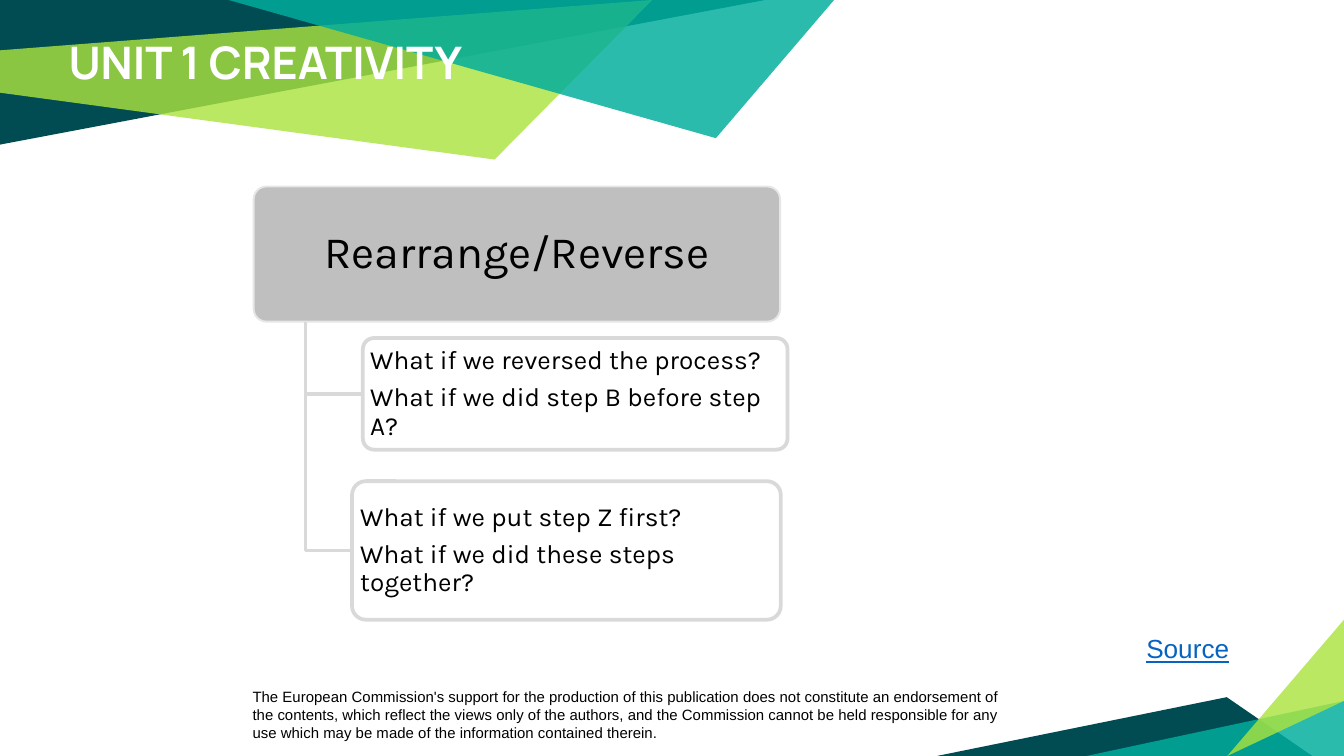
import pptx
import pptx.util
import pptx.dml.color
import pptx.enum.shapes
import pptx.enum.text
import pptx.oxml
import pptx.oxml.ns

Pt = pptx.util.Pt
ANCHOR = pptx.enum.text.MSO_ANCHOR
ALIGN = pptx.enum.text.PP_ALIGN

THEME = {
    "dark": "004C52", "lime": "ABE33F", "teal": "00AE9D",
    "header": "BFBFBF", "rule": "D9D9D9", "white": "FFFFFF",
    "ink": "000000", "link": "0563C1",
    "title_font": "Manrope", "body_font": "Karla", "plain_font": "Arial",
    "title_size": 24, "body_size": 14, "note_size": 8,
}

# Content; boxes are left, top, width, height in points
TITLE = ("UNIT 1 CREATIVITY", (29.5, 15.1, 236.9, 36))
HEADER = ("Rearrange/Reverse", (135.4, 99.4, 283, 73.4))
QUESTIONS = [
    (["What if we reversed the process?",
      "What if we did step B before step A?"], (194.4, 181.1, 227.5, 59.8)),
    (["What if we put step Z first?",
      "What if we did these steps together?"], (188.6, 257.8, 229.7, 74.2)),
]
DISCLAIMER = (
    "The European Commission's support for the production of this publication "
    "does not constitute an endorsement of the contents, which reflect the "
    "views only of the authors, and the Commission cannot be held responsible "
    "for any use which may be made of the information contained therein.",
    (128.2, 365, 416.9, 36))
SOURCE = ("Source", (607, 335.5, 77, 24.5))

# Corner shards: colour, opacity in percent, corner points
SHARDS = [
    ("dark", 100, [(0, 0), (0, 77.5), (410, 0)]),
    ("lime", 81, [(0, 27), (0, 49.7), (265, 85.5), (349.5, 0)]),
    ("dark", 100, [(502, 405), (703, 405), (657.2, 373.5)]),
    ("teal", 83, [(720, 375.5), (720, 405), (582, 405)]),
    ("lime", 81, [(720, 375.5), (720, 332), (657.5, 405)]),
    ("teal", 83, [(122.5, 0), (383.5, 74), (446.8, 0)]),
]


def color(name):
    return pptx.dml.color.RGBColor.from_string(THEME[name])


def set_opacity(element, percent):
    if percent < 100:
        tint = element.find(".//" + pptx.oxml.ns.qn("a:srgbClr"))
        tint.append(pptx.oxml.parse_xml(
            f'<a:alpha {pptx.oxml.ns.nsdecls("a")} val="{percent * 1000}"/>'))


def paint(shape, name, opacity=100):
    shape.shadow.inherit = False
    shape.fill.solid()
    shape.fill.fore_color.rgb = color(name)
    set_opacity(shape.fill._xPr, opacity)


def outline(shape, name, opacity=100):
    shape.line.width = Pt(2)
    shape.line.color.rgb = color(name)
    set_opacity(shape.line._ln, opacity)


def draw_path(page, points, close):
    corners = [(Pt(x), Pt(y)) for x, y in points]
    builder = page.shapes.build_freeform(*corners[0], scale=1.0)
    builder.add_line_segments(corners[1:], close=close)
    return builder.convert_to_shape()


def write(shape, lines, size, font, ink="ink", align=ALIGN.LEFT,
          anchor=ANCHOR.TOP, insets=(7.2, 3.6), wrap=True, spacing=None,
          bold=False, underline=False):
    frame = shape.text_frame
    frame.word_wrap = wrap
    frame.auto_size = pptx.enum.text.MSO_AUTO_SIZE.NONE
    frame.vertical_anchor = anchor
    frame.margin_left = frame.margin_right = Pt(insets[0])
    frame.margin_top = frame.margin_bottom = Pt(insets[1])
    for index, line in enumerate(lines):
        para = frame.add_paragraph() if index else frame.paragraphs[0]
        para.alignment = align
        if spacing:
            para.line_spacing = spacing
            para.space_after = Pt(0.35 * THEME[size])
        span = para.add_run()
        span.text = line
        span.font.size = Pt(THEME[size])
        span.font.name = THEME[font]
        span.font.color.rgb = color(ink)
        span.font.bold = bold
        span.font.underline = underline


def add_text(page, content, *style, **options):
    text, place = content
    box = page.shapes.add_textbox(*map(Pt, place))
    write(box, [text], *style, **options)


def add_card(page, place):
    card = page.shapes.add_shape(
        pptx.enum.shapes.MSO_SHAPE.ROUNDED_RECTANGLE, *map(Pt, place))
    card.adjustments[0] = 0.1
    return card


deck = pptx.Presentation()
deck.slide_width, deck.slide_height = Pt(720), Pt(405)
page = deck.slides.add_slide(deck.slide_layouts[5])

# Disclaimer and corner shards
add_text(page, DISCLAIMER, "note_size", "plain_font")
for name, opacity, points in SHARDS:
    shard = draw_path(page, points, close=True)
    paint(shard, name, opacity)
    shard.line.fill.background()

# Title, raised above the shards
title = page.shapes.title
text, place = TITLE
title.left, title.top, title.width, title.height = map(Pt, place)
write(title, [text], "title_size", "title_font", "white", wrap=False, bold=True)
page.shapes._spTree.append(title._element)

# Header card
text, place = HEADER
header = add_card(page, place)
paint(header, "header")
outline(header, "white", 61)
write(header, [text], "title_size", "body_font", align=ALIGN.CENTER,
      anchor=ANCHOR.MIDDLE, insets=(3.6, 2.2), spacing=0.9)

# Question cards, each hung from a trunk a tenth of the way along the header
trunk = place[0] + place[2] / 10
header_bottom = place[1] + place[3]
for lines, place in QUESTIONS:
    left, top, width, height = place
    middle = top + height / 2
    branch = draw_path(
        page, [(trunk, header_bottom), (trunk, middle), (left, middle)],
        close=False)
    branch.shadow.inherit = False
    branch.fill.background()
    outline(branch, "rule")
    card = add_card(page, place)
    paint(card, "white", 90)
    outline(card, "rule")
    write(card, lines, "body_size", "body_font", anchor=ANCHOR.MIDDLE,
          insets=(2.2, 1.4), spacing=0.9)

# Source label
add_text(page, SOURCE, "body_size", "plain_font", "link", underline=True)

deck.save("out.pptx")
